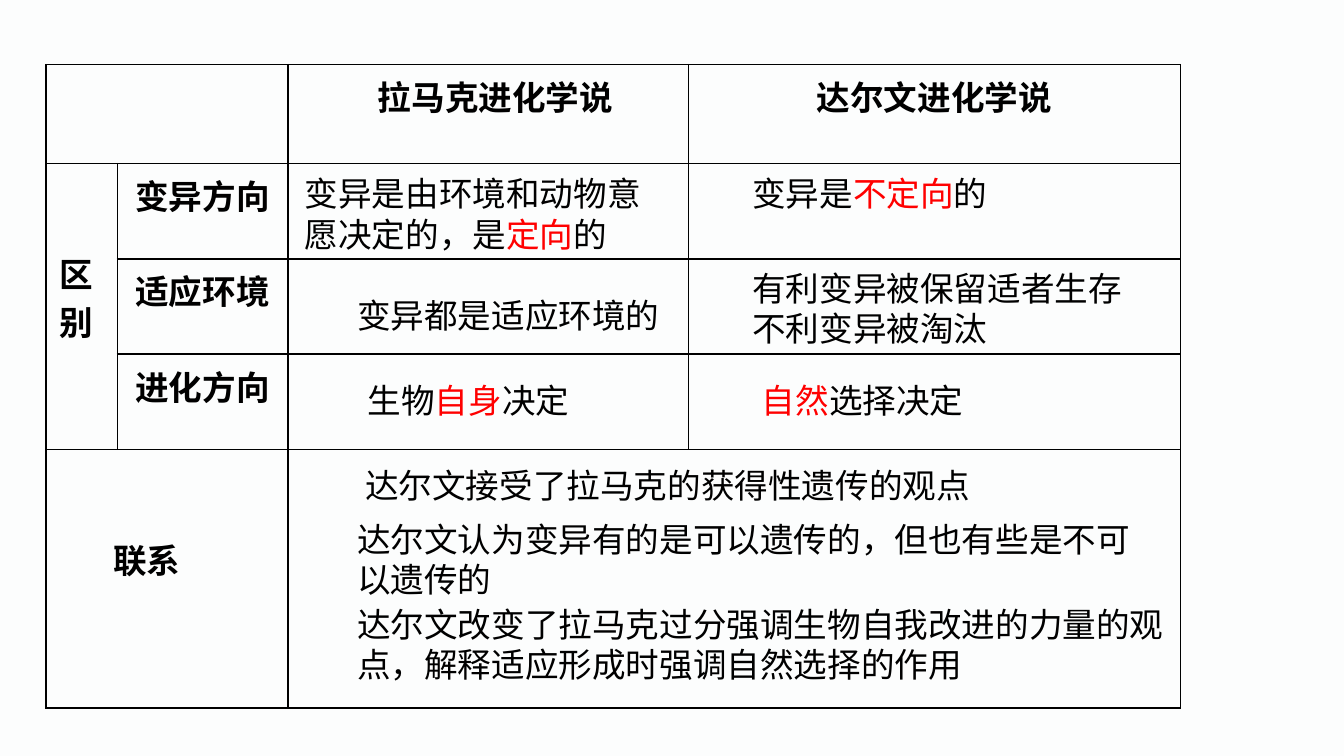
from lxml.etree import SubElement
from pptx import Presentation
from pptx.dml.color import RGBColor
from pptx.enum.text import PP_ALIGN
from pptx.oxml import parse_xml
from pptx.oxml.ns import nsdecls
from pptx.util import Cm, Pt

COLORS = {"background": "FCFDFD", "text": "000000", "emphasis": "FF0000"}


def add_run(paragraph, text, color="text", bold=False):
    run = paragraph.add_run()
    run.text = text
    run.font.name = "Arial"
    run.font.size = Pt(18)
    run.font.bold = bold
    run.font.color.rgb = RGBColor.from_string(COLORS[color])


def add_cell_borders(cell):
    """Draw a black 1 pt line on all four sides of a table cell."""
    properties = cell._tc.get_or_add_tcPr()
    for position, side in enumerate(("lnL", "lnR", "lnT", "lnB")):
        border = parse_xml(
            f'<a:{side} {nsdecls("a")} w="{Pt(1)}"><a:solidFill>'
            f'<a:srgbClr val="{COLORS["text"]}"/></a:solidFill></a:{side}>'
        )
        properties.insert(position, border)


presentation = Presentation()
presentation.slide_width = Cm(25.4)
presentation.slide_height = Cm(14.28)
slide = presentation.slides.add_slide(presentation.slide_layouts[6])
slide.background.fill.solid()
slide.background.fill.fore_color.rgb = RGBColor.from_string(COLORS["background"])

# Comparison table
column_widths = [1.35, 3.22, 7.57, 9.3]
row_heights = [1.87, 1.8, 1.8, 1.8, 4.88]
table = slide.shapes.add_table(
    len(row_heights), len(column_widths), Cm(0.87), Cm(1.22),
    Cm(sum(column_widths)), Cm(sum(row_heights)),
).table
table.first_row = False
table.horz_banding = False
for column, width in zip(table.columns, column_widths):
    column.width = Cm(width)
for row, height in zip(table.rows, row_heights):
    row.height = Cm(height)
for cell in table.iter_cells():
    cell.fill.background()
    add_cell_borders(cell)

for first, last in [((0, 0), (0, 1)), ((1, 0), (3, 0)),
                    ((4, 0), (4, 1)), ((4, 2), (4, 3))]:
    table.cell(*first).merge(table.cell(*last))

# Row, column, heading, alignment, left margin, top margin
headings = [
    (0, 2, "拉马克进化学说", PP_ALIGN.LEFT, 1.7, 0.13),
    (0, 3, "达尔文进化学说", PP_ALIGN.CENTER, 0.25, 0.13),
    (1, 0, "区别", PP_ALIGN.LEFT, 0.25, 1.6),
    (1, 1, "变异方向", PP_ALIGN.CENTER, 0.25, 0.13),
    (2, 1, "适应环境", PP_ALIGN.CENTER, 0.25, 0.13),
    (3, 1, "进化方向", PP_ALIGN.CENTER, 0.25, 0.13),
    (4, 0, "联系", PP_ALIGN.LEFT, 1.27, 1.6),
]
for row, column, heading, alignment, left_margin, top_margin in headings:
    cell = table.cell(row, column)
    cell.margin_left = Cm(left_margin)
    cell.margin_top = Cm(top_margin)
    paragraph = cell.text_frame.paragraphs[0]
    paragraph.alignment = alignment
    add_run(paragraph, heading, bold=True)

# Left, top, width, height, lines; words in square brackets are emphasised
answers = [
    (5.51, 3.15, 7.44, 1.8, ["变异是由环境和动物意愿决定的，是[定向]的"]),
    (13.97, 3.15, 7.44, 1.02, ["变异是[不定向]的"]),
    (6.5, 5.44, 7.44, 1.02, ["变异都是适应环境的"]),
    (13.97, 4.93, 7.82, 1.8, ["有利变异被保留适者生存", "不利变异被淘汰"]),
    (6.7, 7.06, 6.73, 1.02, ["生物[自身]决定"]),
    (14.15, 7.06, 7.44, 1.02, ["[自然]选择决定"]),
    (6.65, 8.66, 15.42, 1.02, ["达尔文接受了拉马克的获得性遗传的观点"]),
    (6.5, 9.68, 15.42, 1.8,
     ["达尔文认为变异有的是可以遗传的，但也有些是不可以遗传的"]),
    (6.5, 11.28, 15.8, 1.8,
     ["达尔文改变了拉马克过分强调生物自我改进的力量的观点，"
      "解释适应形成时强调自然选择的作用"]),
]
for left, top, width, height, lines in answers:
    text_box = slide.shapes.add_textbox(Cm(left), Cm(top), Cm(width), Cm(height))
    text_frame = text_box.text_frame
    text_frame.word_wrap = True
    for index, line in enumerate(lines):
        paragraph = text_frame.add_paragraph() if index else text_frame.paragraphs[0]
        for part_index, part in enumerate(line.replace("]", "[").split("[")):
            if part:
                add_run(paragraph, part, "emphasis" if part_index % 2 else "text")

presentation.save("out.pptx")
